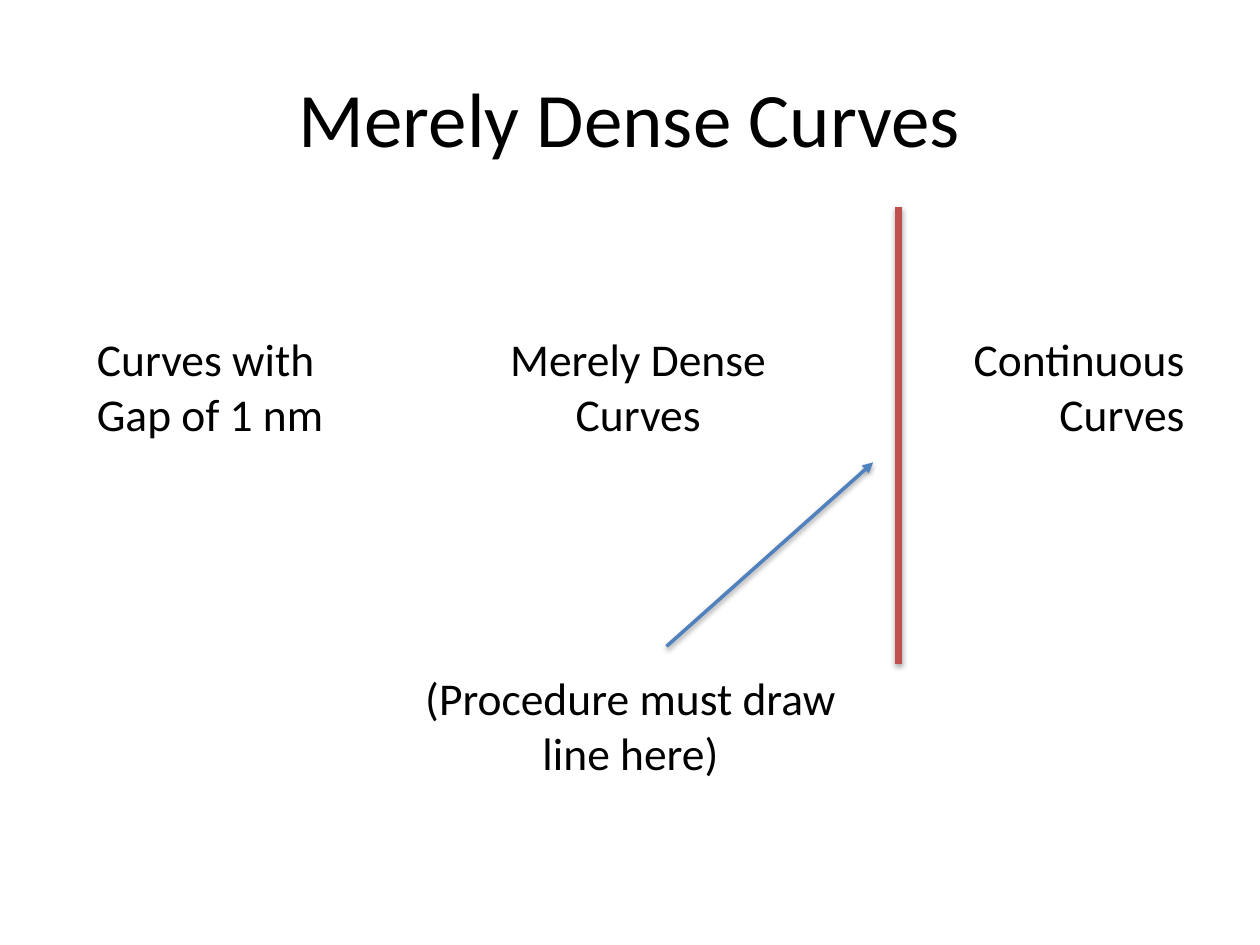
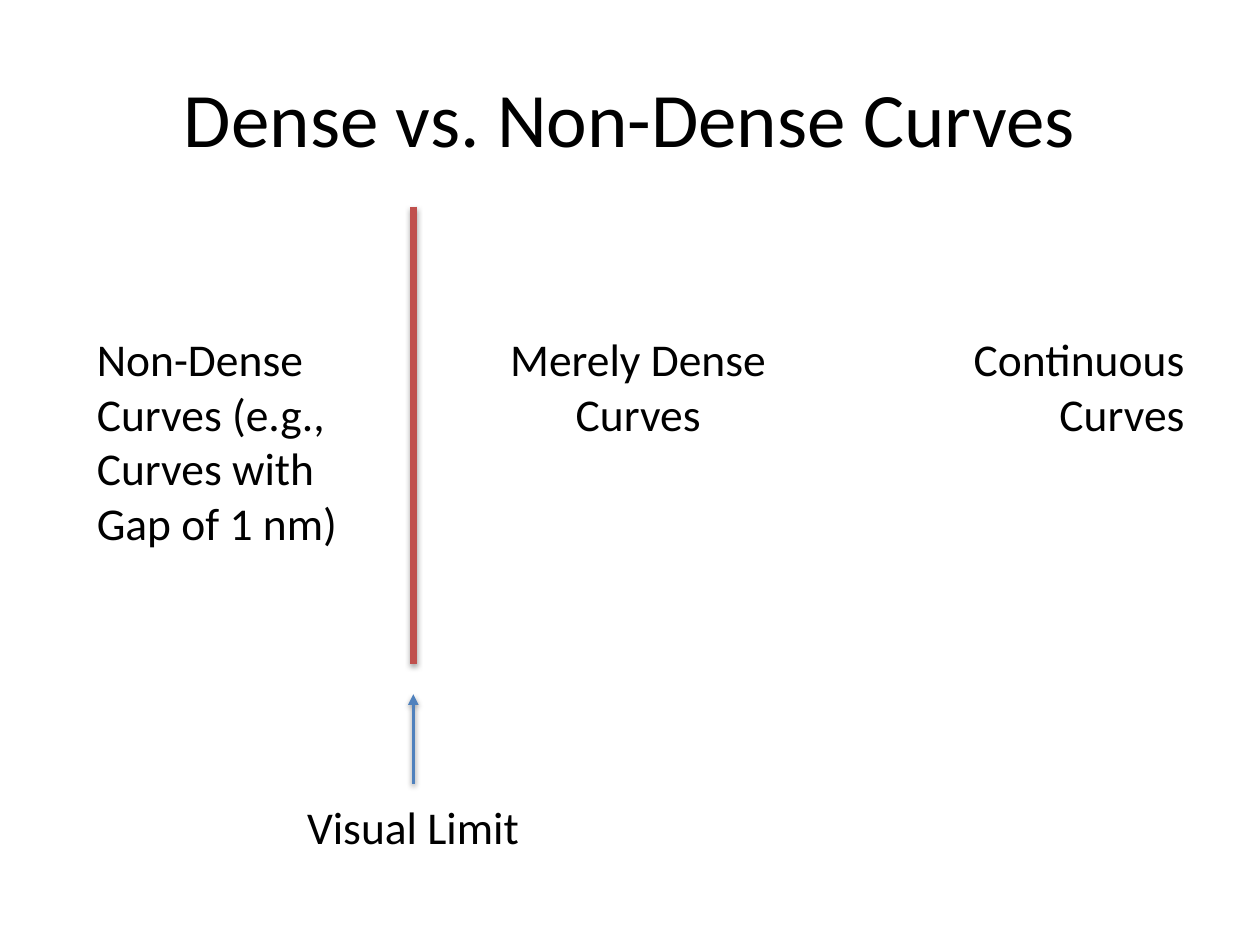
from lxml import etree
from pptx import Presentation
from pptx.dml.color import RGBColor
from pptx.enum.shapes import MSO_CONNECTOR
from pptx.enum.text import MSO_ANCHOR, MSO_AUTO_SIZE, PP_ALIGN
from pptx.oxml.ns import qn
from pptx.util import Inches, Pt

LEFT, CENTER, RIGHT = PP_ALIGN.LEFT, PP_ALIGN.CENTER, PP_ALIGN.RIGHT
MIDDLE = MSO_ANCHOR.MIDDLE
GROW = MSO_AUTO_SIZE.SHAPE_TO_FIT_TEXT
STRAIGHT = MSO_CONNECTOR.STRAIGHT

BLACK = RGBColor(0x00, 0x00, 0x00)
LIMIT_RED = RGBColor(0xC0, 0x50, 0x4D)
ARROW_BLUE = RGBColor(0x4F, 0x81, 0xBD)

TITLE_FONT = {"name": "Calibri", "size": Pt(44)}
LABEL_FONT = {"name": "Calibri", "size": Pt(26)}
TITLE_ONLY = 5
LABEL_TOP = 2.58
LIMIT_TOP, LIMIT_BOTTOM = 1.64, 5.27


def format_paragraph(para, text, align, font):
    para.alignment = align
    span = para.add_run()
    span.text = text
    span.font.color.rgb = BLACK
    for name, value in font.items():
        setattr(span.font, name, value)


def place(shape, left, top, width, height):
    bounds = {"left": left, "top": top, "width": width, "height": height}
    for name, value in bounds.items():
        setattr(shape, name, Inches(value))


def add_page(deck, title):
    page = deck.slides.add_slide(deck.slide_layouts[TITLE_ONLY])
    box = page.shapes.title
    place(box, 0.5, 0.3, 9, 1.25)
    box.text_frame.vertical_anchor = MIDDLE
    format_paragraph(box.text_frame.paragraphs[0], title, CENTER, TITLE_FONT)
    return page


def add_label(page, lines, left, top, width, align):
    height = 0.1 + 0.44 * len(lines)
    box = page.shapes.add_textbox(*map(Inches, (left, top, width, height)))
    frame = box.text_frame
    frame.word_wrap = False
    frame.auto_size = GROW
    for index, line in enumerate(lines):
        para = frame.add_paragraph() if index else frame.paragraphs[0]
        format_paragraph(para, line, align, LABEL_FONT)


def add_line(page, start, end, color, weight):
    line = page.shapes.add_connector(STRAIGHT, *map(Inches, start + end))
    line.line.color.rgb = color
    line.line.width = Pt(weight)
    return line


def add_limit(page, x):
    add_line(page, (x, LIMIT_TOP), (x, LIMIT_BOTTOM), LIMIT_RED, 4)


def add_arrow(page, start, end):
    arrow = add_line(page, start, end, ARROW_BLUE, 2)
    outline = arrow.line._get_or_add_ln()
    etree.SubElement(outline, qn("a:tailEnd"), type="triangle")


def add_curve_kinds(page, sparse_lines, sparse_width):
    add_label(page, ["Continuous", "Curves"], 7.61, LABEL_TOP, 1.89, RIGHT)
    add_label(page, ["Merely Dense", "Curves"], 3.94, LABEL_TOP, 2.25, CENTER)
    add_label(page, sparse_lines, 0.67, LABEL_TOP, sparse_width, LEFT)


def add_merely_dense_page(deck):
    page = add_page(deck, "Merely Dense Curves")
    add_curve_kinds(page, ["Curves with", "Gap of 1 nm"], 2.01)
    add_limit(page, 7.13)
    add_label(page, ["(Procedure must draw", "line here)"], 3.26, LIMIT_BOTTOM, 3.49, CENTER)
    add_arrow(page, (5.29, 5.13), (6.93, 3.67))


def add_visual_limit_page(deck):
    page = add_page(deck, "Dense vs. Non-Dense Curves")
    sparse_lines = ["Non-Dense", "Curves (e.g.,", "Curves with", "Gap of 1 nm)"]
    add_curve_kinds(page, sparse_lines, 2.13)
    limit_x = 3.28
    add_limit(page, limit_x)
    add_label(page, ["Visual Limit"], 2.33, 6.29, 1.9, CENTER)
    add_arrow(page, (limit_x, 6.22), (limit_x, 5.51))


def main():
    deck = Presentation()
    deck.slide_width, deck.slide_height = Inches(10), Inches(7.5)
    add_merely_dense_page(deck)
    add_visual_limit_page(deck)
    deck.save("out.pptx")


if __name__ == "__main__":
    main()
